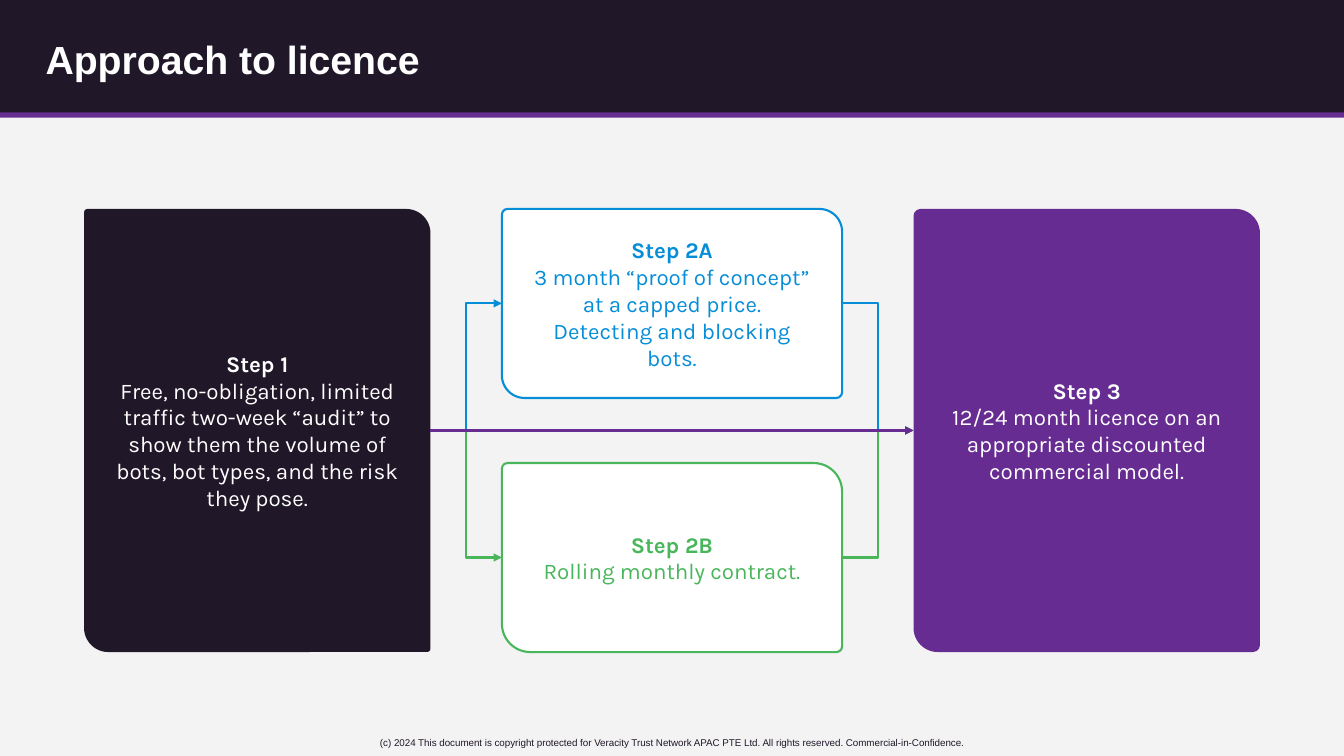
from dataclasses import dataclass

from lxml import etree
from pptx import Presentation
from pptx.dml.color import RGBColor
from pptx.enum.shapes import MSO_CONNECTOR, MSO_SHAPE
from pptx.enum.text import MSO_ANCHOR, PP_ALIGN
from pptx.oxml.ns import qn
from pptx.shapes.autoshape import Shape
from pptx.shapes.connector import Connector
from pptx.slide import Slide
from pptx.text.text import TextFrame
from pptx.util import Pt

RECT, CARD = MSO_SHAPE.RECTANGLE, MSO_SHAPE.ROUND_2_DIAG_RECTANGLE
STRAIGHT, ELBOW = MSO_CONNECTOR.STRAIGHT, MSO_CONNECTOR.ELBOW
MIDDLE, TOP = MSO_ANCHOR.MIDDLE, MSO_ANCHOR.TOP
LEFT, CENTER = PP_ALIGN.LEFT, PP_ALIGN.CENTER

EMU_PER_PX = 9525
SLIDE_W, SLIDE_H = 1280, 720
DARK, PURPLE, BLUE, GREEN = "201728", "662C91", "068DD7", "49B65B"
WHITE, PALE = "FFFFFF", "F3F3F3"

MARGIN, CARD_W, OPTION_W, GAP = 80, 330, 324, 68
CARD_TOP, CARD_H, OPTION_H = 199, 422, 180
OPTION_X = MARGIN + CARD_W + GAP
LAST_X = OPTION_X + OPTION_W + GAP
LOWER_TOP = CARD_TOP + CARD_H - OPTION_H
MID_Y = CARD_TOP + CARD_H // 2
CARD_INSET = 23
SITE_RIGHT, SITE_LEFT = 0, 2


@dataclass(frozen=True)
class Box:
    x: int
    y: int
    w: int
    h: int


@dataclass(frozen=True)
class Step:
    heading: str
    body: str
    box: Box
    fill: str
    ink: str
    corners: tuple[float, float]
    outline: str | None = None


@dataclass(frozen=True)
class Link:
    kind: MSO_CONNECTOR
    start: tuple[int, int]
    end: tuple[int, int]
    color: str


STEPS = [
    Step("Step 1", "Free, no-obligation, limited traffic two-week “audit” to show them "
         "the volume of bots, bot types, and the risk they pose.",
         Box(MARGIN, CARD_TOP, CARD_W, CARD_H), DARK, WHITE, (0.01, 0.07)),
    Step("Step 2A", "3 month “proof of concept” at a capped price. "
         "Detecting and blocking bots.",
         Box(OPTION_X, CARD_TOP, OPTION_W, OPTION_H), WHITE, BLUE, (0.03, 0.12), BLUE),
    Step("Step 3", "12/24 month licence on an appropriate discounted commercial model.",
         Box(LAST_X, CARD_TOP, CARD_W, CARD_H), PURPLE, WHITE, (0.02, 0.07)),
    Step("Step 2B", "Rolling monthly contract.",
         Box(OPTION_X, LOWER_TOP, OPTION_W, OPTION_H), WHITE, GREEN, (0.03, 0.15), GREEN),
]

START = (MARGIN + CARD_W, MID_Y)
FINISH = (LAST_X, MID_Y)
UPPER_Y, LOWER_Y = (top + OPTION_H // 2 for top in (CARD_TOP, LOWER_TOP))
BRANCHES = [(UPPER_Y, BLUE), (LOWER_Y, GREEN)]
LINKS = [
    *(Link(ELBOW, START, (OPTION_X, y), color) for y, color in BRANCHES),
    *(Link(ELBOW, (OPTION_X + OPTION_W, y), FINISH, color) for y, color in BRANCHES),
]


def px(n: int) -> int:
    return n * EMU_PER_PX


def rgb(color: str) -> RGBColor:
    return RGBColor.from_string(color)


def place(box: Box) -> tuple[int, int, int, int]:
    return px(box.x), px(box.y), px(box.w), px(box.h)


def apply(target: object, values: dict[str, object]) -> None:
    for name, value in values.items():
        setattr(target, name, value)


def write(tf: TextFrame, lines: list[tuple[str, bool]], font: str, size: int,
          color: str, align: PP_ALIGN, spacing: float = 1.0) -> None:
    for i, (text, bold) in enumerate(lines):
        p = tf.add_paragraph() if i else tf.paragraphs[0]
        apply(p, {"alignment": align, "line_spacing": spacing})
        r = p.add_run()
        r.text = text
        apply(r.font, {"name": font, "size": Pt(size), "bold": bold})
        r.font.color.rgb = rgb(color)


def add_block(s: Slide, kind: MSO_SHAPE, box: Box, fill: str,
              outline: str | None = None) -> Shape:
    sp = s.shapes.add_shape(kind, *place(box))
    sp.shadow.inherit = False
    sp.fill.solid()
    sp.fill.fore_color.rgb = rgb(fill)
    if outline:
        sp.line.color.rgb = rgb(outline)
        sp.line.width = Pt(1.5)
    else:
        sp.line.fill.background()
    return sp


def add_label(s: Slide, box: Box, anchor: MSO_ANCHOR) -> TextFrame:
    tf = s.shapes.add_textbox(*place(box)).text_frame
    apply(tf, {"word_wrap": True, "vertical_anchor": anchor})
    return tf


def add_step(s: Slide, step: Step) -> Shape:
    sp = add_block(s, CARD, step.box, step.fill, step.outline)
    for i, corner in enumerate(step.corners):
        sp.adjustments[i] = corner
    tf = sp.text_frame
    apply(tf, {"word_wrap": True, "vertical_anchor": MIDDLE})
    apply(tf, {f"margin_{side}": px(CARD_INSET)
               for side in ("left", "top", "right", "bottom")})
    write(tf, [(step.heading, True), (step.body, False)], "Karla", 16, step.ink, CENTER)
    return sp


def add_link(s: Slide, link: Link) -> Connector:
    cx = s.shapes.add_connector(link.kind, *map(px, link.start + link.end))
    cx.line.color.rgb = rgb(link.color)
    cx.line.width = Pt(1.5)
    ln = cx.line._get_or_add_ln()
    etree.SubElement(ln, qn("a:tailEnd"), type="triangle")
    etree.SubElement(ln.getparent(), qn("a:effectLst"))
    return cx


def main() -> None:
    prs = Presentation()
    apply(prs, {"slide_width": px(SLIDE_W), "slide_height": px(SLIDE_H)})
    s = prs.slides.add_slide(prs.slide_layouts[6])
    s.background.fill.solid()
    s.background.fill.fore_color.rgb = rgb(PALE)

    footer = add_label(s, Box(260, 697, 760, 21), TOP)
    write(footer, [("(c) 2024 This document is copyright protected for Veracity Trust "
                    "Network APAC PTE Ltd. All rights reserved. "
                    "Commercial-in-Confidence.", False)], "Arial", 7, DARK, CENTER)
    add_block(s, RECT, Box(0, 0, SLIDE_W, 108), DARK)
    add_block(s, RECT, Box(0, 107, SLIDE_W, 5), PURPLE)
    title = add_label(s, Box(34, 28, 1104, 62), MIDDLE)
    write(title, [("Approach to licence", True)], "Arial", 28, WHITE, LEFT, 0.9)

    cards = {step.heading: add_step(s, step) for step in STEPS}
    for link in LINKS:
        add_link(s, link)

    direct = add_link(s, Link(STRAIGHT, START, FINISH, PURPLE))
    direct.begin_connect(cards["Step 1"], SITE_RIGHT)
    direct.end_connect(cards["Step 3"], SITE_LEFT)
    apply(direct, {"begin_x": px(START[0]), "begin_y": px(MID_Y),
                   "end_x": px(FINISH[0]), "end_y": px(MID_Y)})
    prs.save("out.pptx")


if __name__ == "__main__":
    main()
